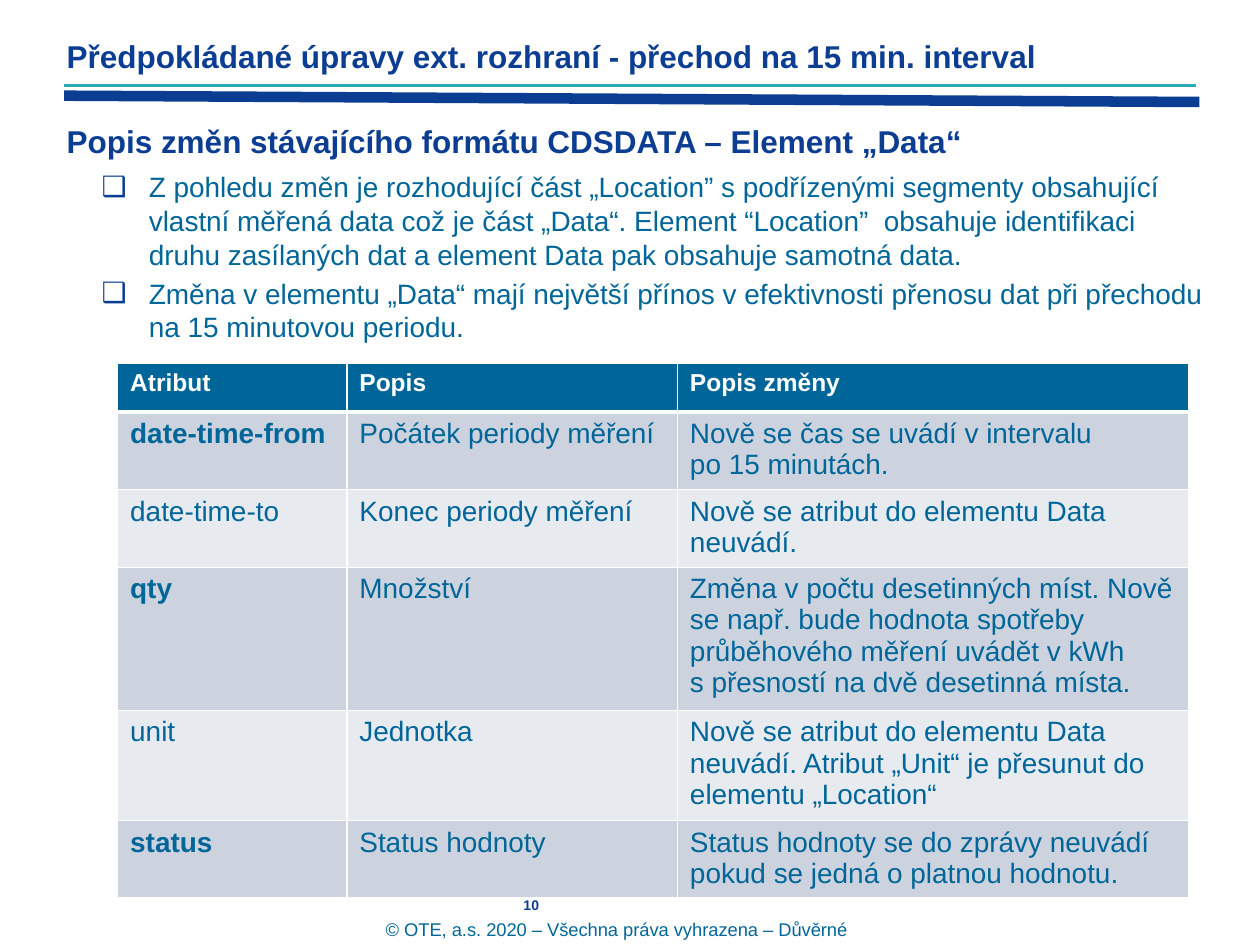
"""Build the slide on changes to the CDSDATA format, element Data."""
import pptx
import pptx.dml.color
import pptx.enum.shapes
import pptx.enum.text
import pptx.oxml
import pptx.oxml.ns
import pptx.util

Pt = pptx.util.Pt
CENTER = pptx.enum.text.PP_ALIGN.CENTER
NAVY, TEAL, BLUE, WHITE = "0B3D92", "28ABB7", "006699", "FFFFFF"
BANDS = ["CCD3DE", "E7EAEF"]

HEADING = {"size": Pt(18), "bold": True, "color": NAVY}
BODY = {"size": Pt(16), "bold": False, "color": BLUE}
STRONG = {**BODY, "bold": True}
HEAD_CELL = {"size": Pt(14), "bold": True, "color": WHITE}
FOOTER = {"size": Pt(10.5), "bold": False, "color": BLUE}
PAGE = {"size": Pt(8), "bold": True, "color": NAVY}

BULLETS = [
    "Z pohledu změn je rozhodující část „Location” s podřízenými segmenty obsahující vlastní měřená data "
    "což je část „Data“. Element “Location”  obsahuje identifikaci druhu zasílaných dat a element Data "
    "pak obsahuje samotná data.",
    "Změna v elementu „Data“ mají největší přínos v efektivnosti přenosu dat při přechodu "
    "na 15 minutovou periodu.",
]
TEXTS = [
    ((31, 20.3, 581, 40), ["Předpokládané úpravy ext. rozhraní - přechod na 15 min. interval"], HEADING,
     {"line_spacing": 0.9}),
    ((31, 68.7, 581, 40), ["Popis změn stávajícího formátu CDSDATA – Element „Data“"], HEADING,
     {"line_spacing": 0.9}),
    ((51, 93.6, 645, 110), BULLETS, BODY, {}),
    ((283.6, 508.7, 40, 16.6), ["10"], PAGE, {"alignment": CENTER}),
    ((51, 521.3, 603, 18.7), ["© OTE, a.s. 2020 – Všechna práva vyhrazena – Důvěrné"], FOOTER,
     {"alignment": CENTER}),
]
RULES = [((36.7, 54.7), (685.4, 58.3), NAVY, 6), ((36.7, 49), (683.3, 49), TEAL, 2)]
HEADER = ["Atribut", "Popis", "Popis změny"]
ROWS = [
    ("date-time-from", "Počátek periody měření", "Nově se čas se uvádí v intervalu \npo 15 minutách."),
    ("date-time-to", "Konec periody měření", "Nově se atribut do elementu Data neuvádí."),
    ("qty", "Množství", "Změna v počtu desetinných míst. Nově se např. bude hodnota spotřeby průběhového "
     "měření uvádět v kWh \ns přesností na dvě desetinná místa."),
    ("unit", "Jednotka", "Nově se atribut do elementu Data neuvádí. Atribut „Unit“ je přesunut "
     "do elementu „Location“"),
    ("status", "Status hodnoty", "Status hodnoty se do zprávy neuvádí pokud se jedná o platnou hodnotu."),
]
KEPT = {"date-time-from", "qty", "status"}
COLUMNS = [131, 188.9, 292.1]
HEIGHTS = [28, 44.4, 44.4, 81.8, 63, 44]


def rgb(value):
    return pptx.dml.color.RGBColor.from_string(value)


def add_xml(parent, tag, attrs="", inner=""):
    ns = pptx.oxml.ns.nsdecls("a")
    parent.append(pptx.oxml.parse_xml(f"<a:{tag} {ns} {attrs}>{inner}</a:{tag}>"))


def solid(color):
    return f'<a:solidFill><a:srgbClr val="{color}"/></a:solidFill>'


def write(p, text, style, layout):
    p.text = text
    for name, value in layout.items():
        setattr(p, name, value)
    for item in [p, *p.runs]:
        item.font.name = "Arial"
        for name, value in style.items():
            if name == "color":
                item.font.color.rgb = rgb(value)
            else:
                setattr(item.font, name, value)


def add_bullet(p):
    ppr = p._p.get_or_add_pPr()
    ppr.set("marL", str(Pt(27)))
    ppr.set("indent", str(-Pt(27)))
    add_xml(ppr, "buClr", inner=f'<a:srgbClr val="{NAVY}"/>')
    add_xml(ppr, "buFont", 'typeface="Arial"')
    add_xml(ppr, "buChar", 'char="❑"')


def add_text(s, box, paragraphs, style, layout):
    tf = s.shapes.add_textbox(*map(Pt, box)).text_frame
    tf.word_wrap = True
    for i, text in enumerate(paragraphs):
        p = tf.add_paragraph() if i else tf.paragraphs[0]
        if paragraphs is BULLETS:
            add_bullet(p)
        spacing = {"space_before": Pt(3.2 if i else 0)}
        write(p, text, style, {**layout, **spacing})


def add_rule(s, start, end, color, width):
    line = s.shapes.add_connector(pptx.enum.shapes.MSO_CONNECTOR.STRAIGHT, *map(Pt, start + end))
    line.line.color.rgb = rgb(color)
    line.line.width = Pt(width)
    add_xml(line._element.spPr, "effectLst")


def fill_cell(cell, text, style, fill, bottom):
    tcpr = cell._tc.get_or_add_tcPr()
    for side, width in {"lnL": 1, "lnR": 1, "lnT": 1, "lnB": bottom}.items():
        add_xml(tcpr, side, f'w="{Pt(width)}"', solid(WHITE))
    cell.fill.solid()
    cell.fill.fore_color.rgb = rgb(fill)
    cell.margin_bottom = Pt(1)
    write(cell.text_frame.paragraphs[0], text, style, {})


def add_attribute_table(s):
    grid = [HEADER, *ROWS]
    box = (67.2, 207.4, sum(COLUMNS), sum(HEIGHTS))
    table = s.shapes.add_table(len(grid), len(HEADER), *map(Pt, box)).table
    for column, width in zip(table.columns, COLUMNS):
        column.width = Pt(width)
    for i, (row, height, texts) in enumerate(zip(table.rows, HEIGHTS, grid)):
        row.height = Pt(height)
        fill = BANDS[(i - 1) % 2] if i else BLUE
        for cell, text in zip(row.cells, texts):
            style = HEAD_CELL if i == 0 else STRONG if text in KEPT else BODY
            fill_cell(cell, text, style, fill, 1 if i else 3)


def main():
    prs = pptx.Presentation()
    prs.slide_width, prs.slide_height = Pt(720), Pt(540)
    s = prs.slides.add_slide(prs.slide_layouts[6])
    for rule in RULES:
        add_rule(s, *rule)
    add_attribute_table(s)
    for text in TEXTS:
        add_text(s, *text)
    prs.save("out.pptx")


if __name__ == "__main__":
    main()
